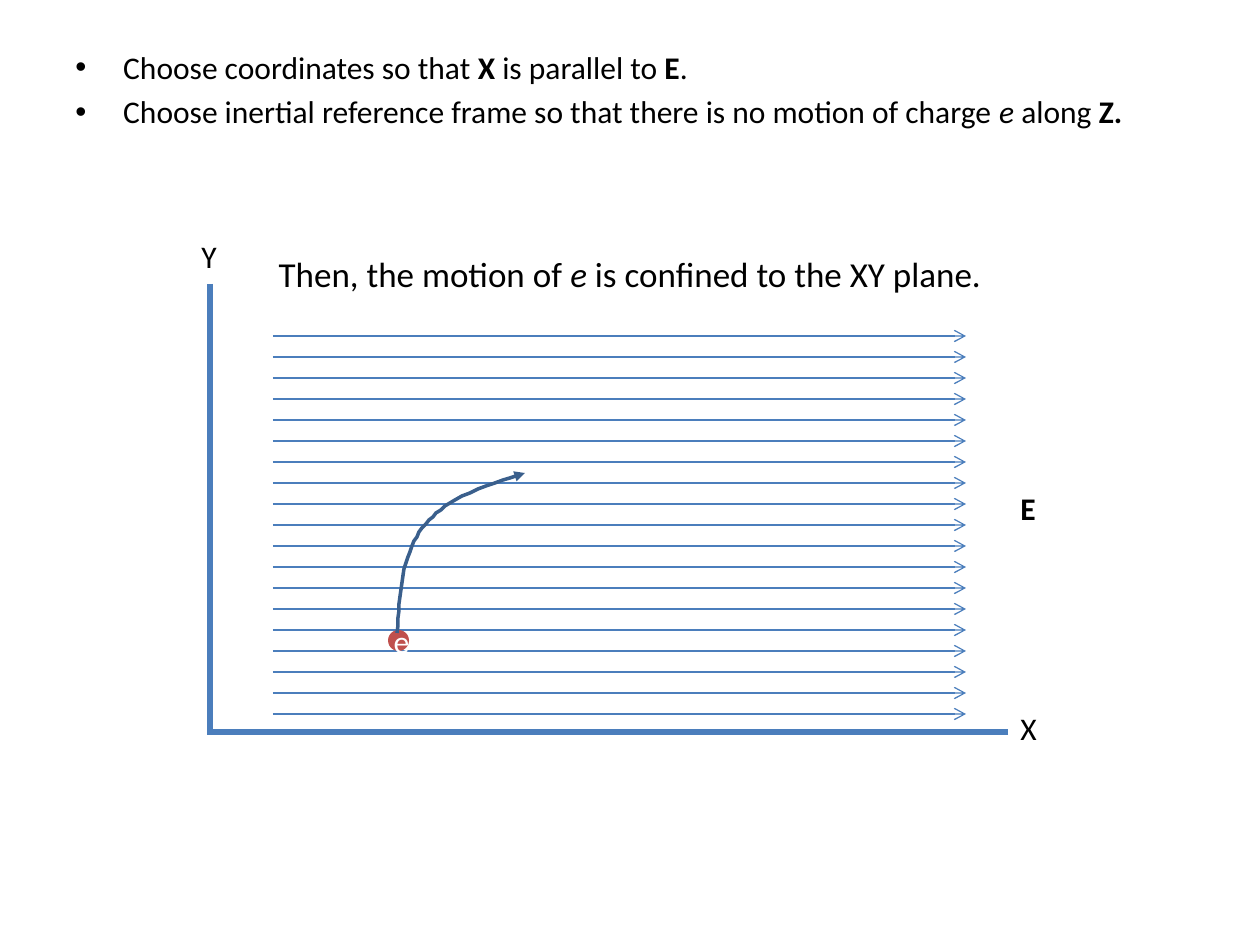
from dataclasses import dataclass

from lxml.etree import SubElement
from pptx import Presentation
from pptx.dml.color import RGBColor
from pptx.enum.shapes import MSO_CONNECTOR, MSO_SHAPE
from pptx.enum.text import MSO_ANCHOR, MSO_AUTO_SIZE, PP_ALIGN
from pptx.oxml.ns import qn
from pptx.util import Emu, Inches, Pt

EMU_PER_PX = 914400 / 126


@dataclass(frozen=True)
class Theme:
    font: str = "Calibri"
    text: RGBColor = RGBColor(0x00, 0x00, 0x00)
    charge_text: RGBColor = RGBColor(0xFF, 0xFF, 0xFF)
    field: RGBColor = RGBColor(0x4B, 0x7E, 0xBC)
    charge: RGBColor = RGBColor(0xC0, 0x50, 0x4D)
    path_line: RGBColor = RGBColor(0x3A, 0x5F, 0x8C)
    title_size: int = 20
    body_size: int = 18
    axis_width: float = 3
    field_width: float = 0.75
    path_width: float = 2


THEME = Theme()


def px(value):
    return Emu(round(value * EMU_PER_PX))


def add_runs(paragraph, runs, size=THEME.body_size, color=THEME.text):
    """Add (text, style) runs; a style holds b for bold and i for italic."""
    for text, style in runs:
        run = paragraph.add_run()
        run.text = text
        run.font.name = THEME.font
        run.font.size = Pt(size)
        run.font.color.rgb = color
        run.font.bold = "b" in style
        run.font.italic = "i" in style


def add_arrowhead(shape, kind):
    SubElement(shape.line._get_or_add_ln(), qn("a:tailEnd"), type=kind)


def add_line(slide, start, end, width):
    line = slide.shapes.add_connector(
        MSO_CONNECTOR.STRAIGHT, *(px(value) for value in (*start, *end)))
    line.line.color.rgb = THEME.field
    line.line.width = Pt(width)
    SubElement(line._element.spPr, qn("a:effectLst"))
    return line


def add_title(slide, box, runs):
    title = slide.shapes.title
    title.left, title.top, title.width, title.height = map(px, box)
    frame = title.text_frame
    frame.auto_size = MSO_AUTO_SIZE.NONE
    frame.vertical_anchor = MSO_ANCHOR.TOP
    frame.margin_top = 0
    paragraph = frame.paragraphs[0]
    paragraph.alignment = PP_ALIGN.CENTER
    add_runs(paragraph, runs, THEME.title_size)


def add_bullets(slide, box, items):
    frame = slide.shapes.add_textbox(*map(px, box)).text_frame
    frame.word_wrap = True
    for index, runs in enumerate(items):
        paragraph = frame.add_paragraph() if index else frame.paragraphs[0]
        if index:
            paragraph.space_before = Pt(3.6)
        properties = paragraph._p.get_or_add_pPr()
        properties.set("marL", str(Inches(0.38)))
        properties.set("indent", str(Inches(-0.38)))
        SubElement(properties, qn("a:buFont"), typeface="Arial")
        SubElement(properties, qn("a:buChar"), char="•")
        add_runs(paragraph, runs)


def add_label(slide, box, text, style=""):
    frame = slide.shapes.add_textbox(*map(px, box)).text_frame
    frame.word_wrap = False
    frame.auto_size = MSO_AUTO_SIZE.SHAPE_TO_FIT_TEXT
    add_runs(frame.paragraphs[0], [(text, style)])


def add_charge(slide, box):
    charge = slide.shapes.add_shape(MSO_SHAPE.OVAL, *map(px, box))
    charge.shadow.inherit = False
    charge.fill.solid()
    charge.fill.fore_color.rgb = THEME.charge
    charge.line.fill.background()
    frame = charge.text_frame
    frame.vertical_anchor = MSO_ANCHOR.MIDDLE
    frame.paragraphs[0].alignment = PP_ALIGN.CENTER
    add_runs(frame.paragraphs[0], [("e", "")], color=THEME.charge_text)


def bezier_points(controls, steps=12):
    """Sample a chain of cubic curves that share their end points."""
    points = [controls[0]]
    for first in range(0, len(controls) - 1, 3):
        segment = controls[first:first + 4]
        for step in range(1, steps + 1):
            t = step / steps
            weights = ((1 - t) ** 3, 3 * t * (1 - t) ** 2, 3 * t * t * (1 - t), t ** 3)
            points.append(tuple(
                sum(weight * point[axis] for weight, point in zip(weights, segment))
                for axis in (0, 1)))
    return points


def add_trajectory(slide, controls):
    start, *points = bezier_points(controls)
    builder = slide.shapes.build_freeform(*start, scale=EMU_PER_PX)
    builder.add_line_segments(points, close=False)
    curve = builder.convert_to_shape()
    curve.shadow.inherit = False
    curve.fill.background()
    curve.line.color.rgb = THEME.path_line
    curve.line.width = Pt(THEME.path_width)
    add_arrowhead(curve, "triangle")


def add_field_plot(slide, box):
    left, top, width, height = box
    bottom = top + height

    # Axes
    add_line(slide, (left, top), (left, bottom + 3), THEME.axis_width)
    add_line(slide, (left + width, bottom), (left, bottom), THEME.axis_width)

    # Evenly spaced field lines
    field_count, field_gap = 19, 21
    for index in range(field_count):
        y = top + 52 + index * field_gap
        line = add_line(slide, (left + 63, y), (left + width - 42, y), THEME.field_width)
        add_arrowhead(line, "arrow")

    # Field and axis labels
    add_label(slide, (left + width, top + 199, 40, 50), "E", "b")
    add_label(slide, (left + width, bottom - 29, 43, 50), "X")
    add_label(slide, (left - 21, top - 53, 40, 50), "Y")

    # Charge and its motion
    add_charge(slide, (left + 178, top + 346, 21, 21))
    controls = [(187, 349), (189, 320), (191, 289), (200, 268), (208, 245),
                (220, 233), (240, 219), (259, 206), (315, 189), (315, 189)]
    add_trajectory(slide, [(left + x, top + y) for x, y in controls])


def main():
    presentation = Presentation()
    presentation.slide_width, presentation.slide_height = px(1260), px(945)
    slide = presentation.slides.add_slide(presentation.slide_layouts[5])

    add_title(slide, (63, 252, 1134, 84), [
        ("Then, the motion of ", ""), ("e", "i"),
        (" is confined to the XY plane.", "")])
    add_field_plot(slide, (210, 284, 798, 448))
    add_bullets(slide, (63, 42, 1134, 116), [
        [("Choose coordinates so that ", ""), ("X", "b"),
         (" is parallel to ", ""), ("E", "b"), (".", "")],
        [("Choose inertial reference frame so that there is no motion of charge ", ""),
         ("e", "i"), (" along ", ""), ("Z.", "b")],
    ])
    presentation.save("out.pptx")


if __name__ == "__main__":
    main()
